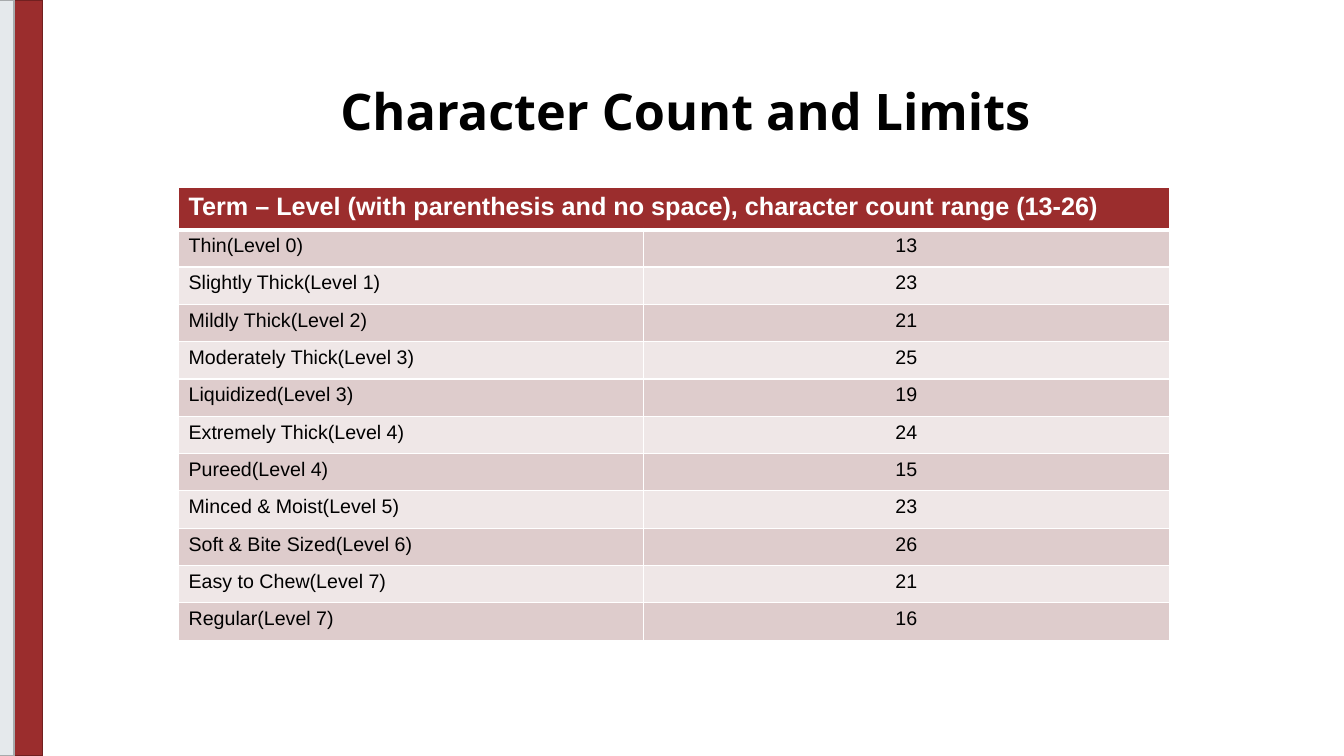
"""Build the slide on character counts and limits for diet level terms."""
import lxml.etree
import pptx
import pptx.dml.color
import pptx.enum.shapes
import pptx.enum.text
import pptx.oxml.ns
import pptx.util

Cm = pptx.util.Cm
Pt = pptx.util.Pt
ALIGN = pptx.enum.text.PP_ALIGN
ANCHOR = pptx.enum.text.MSO_ANCHOR

COLOURS = {
    "red": "9B2D2D",
    "dark red": "712020",
    "grey": "E5E9EC",
    "dark grey": "A7AAAC",
    "dark band": "DECCCC",
    "light band": "EFE7E7",
    "white": "FFFFFF",
    "black": "000000",
}
TITLE_FONT = {"name": "Open Sans", "size": Pt(36), "bold": True}
HEADER_FONT = {"name": "Arial", "size": Pt(18), "bold": True}
BODY_FONT = {"name": "Arial", "size": Pt(14), "bold": False}

HEADER = "Term – Level (with parenthesis and no space), character count range (13-26)"
TERMS = [
    ("Thin(Level 0)", 13),
    ("Slightly Thick(Level 1)", 23),
    ("Mildly Thick(Level 2)", 21),
    ("Moderately Thick(Level 3)", 25),
    ("Liquidized(Level 3)", 19),
    ("Extremely Thick(Level 4)", 24),
    ("Pureed(Level 4)", 15),
    ("Minced & Moist(Level 5)", 23),
    ("Soft & Bite Sized(Level 6)", 26),
    ("Easy to Chew(Level 7)", 21),
    ("Regular(Level 7)", 16),
]
COLUMN_WIDTHS = (Cm(11.71), Cm(13.26))
HEADER_HEIGHT = Cm(1.07)
ROW_HEIGHT = Cm(0.94)


def colour(name):
    return pptx.dml.color.RGBColor.from_string(COLOURS[name])


def write(para, text, font, font_colour, align):
    para.alignment = align
    span = para.add_run()
    span.text = text
    for key, value in font.items():
        setattr(span.font, key, value)
    span.font.color.rgb = colour(font_colour)


def add_title(page, text):
    title = page.shapes.title
    place = {"left": Cm(1.78), "top": Cm(1.04), "width": Cm(30.99), "height": Cm(3.68)}
    for key, value in place.items():
        setattr(title, key, value)
    title.text_frame.vertical_anchor = ANCHOR.MIDDLE
    para = title.text_frame.paragraphs[0]
    para.line_spacing = 0.9
    write(para, text, TITLE_FONT, "black", ALIGN.CENTER)


def add_bar(page, left, width, fill, line):
    bar = page.shapes.add_shape(
        pptx.enum.shapes.MSO_SHAPE.RECTANGLE, left, 0, width, Cm(19.05))
    bar.shadow.inherit = False
    bar.fill.solid()
    bar.fill.fore_color.rgb = colour(fill)
    bar.line.color.rgb = colour(line)
    bar.line.width = Pt(1)


def add_borders(cell, top, bottom):
    properties = cell._tc.get_or_add_tcPr()
    qualify = pptx.oxml.ns.qn
    for side, points in (("L", 1), ("R", 1), ("T", top), ("B", bottom)):
        border = lxml.etree.SubElement(
            properties, qualify(f"a:ln{side}"), w=str(Pt(points)))
        fill = lxml.etree.SubElement(border, qualify("a:solidFill"))
        lxml.etree.SubElement(fill, qualify("a:srgbClr"), val=COLOURS["white"])


def format_cell(cell, fill, top=1, bottom=1):
    add_borders(cell, top, bottom)
    cell.fill.solid()
    cell.fill.fore_color.rgb = colour(fill)


def add_term_table(page):
    height = HEADER_HEIGHT + ROW_HEIGHT * len(TERMS)
    table = page.shapes.add_table(
        len(TERMS) + 1, 2, Cm(4.5), Cm(4.72), sum(COLUMN_WIDTHS), height).table
    for column, width in zip(table.columns, COLUMN_WIDTHS):
        column.width = width
    for row in table.rows:
        row.height = ROW_HEIGHT
    table.rows[0].height = HEADER_HEIGHT

    for cell in table.rows[0].cells:
        format_cell(cell, "red", bottom=3)
    header = table.cell(0, 0)
    header.merge(table.cell(0, 1))
    write(header.text_frame.paragraphs[0], HEADER, HEADER_FONT, "white", ALIGN.LEFT)

    for number, term in enumerate(TERMS, start=1):
        band = "dark band" if number % 2 else "light band"
        for column, align in enumerate((ALIGN.LEFT, ALIGN.CENTER)):
            cell = table.cell(number, column)
            format_cell(cell, band, top=3 if number == 1 else 1)
            para = cell.text_frame.paragraphs[0]
            write(para, str(term[column]), BODY_FONT, "black", align)


def main():
    deck = pptx.Presentation()
    deck.slide_width = Cm(33.87)
    deck.slide_height = Cm(19.05)
    page = deck.slides.add_slide(deck.slide_layouts.get_by_name("Title Only"))
    add_bar(page, 0, Cm(1.07), "red", "dark red")
    add_bar(page, Cm(-0.08), Cm(0.43), "grey", "dark grey")
    add_title(page, "Character Count and Limits")
    add_term_table(page)
    deck.save("out.pptx")


if __name__ == "__main__":
    main()
